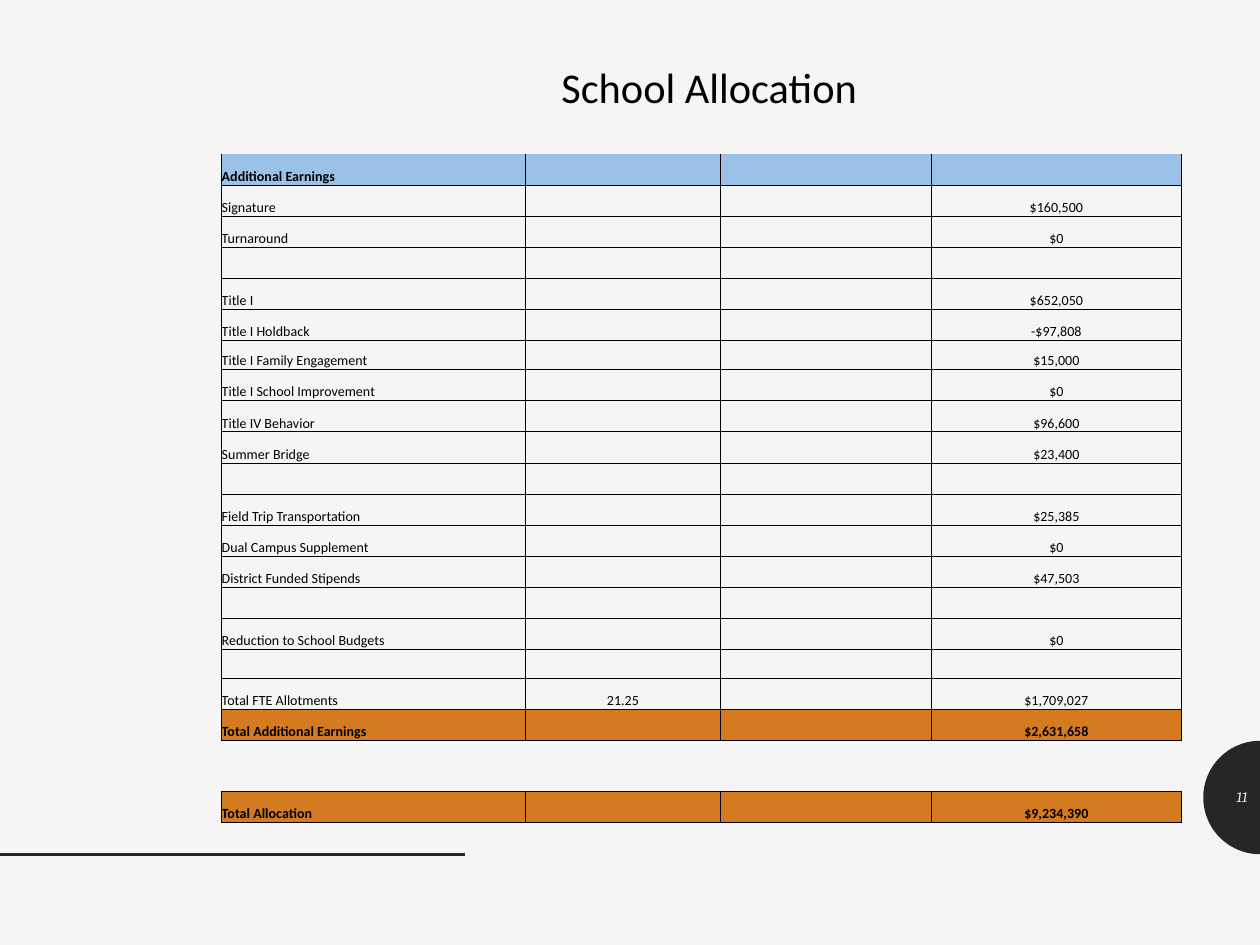
from math import cos, pi, sin

from lxml.etree import SubElement
from pptx import Presentation
from pptx.dml.color import RGBColor
from pptx.enum.shapes import MSO_CONNECTOR as Connector
from pptx.enum.text import MSO_ANCHOR as Anchor, PP_ALIGN as Align
from pptx.oxml.ns import qn
from pptx.util import Inches, Pt

hex_color = RGBColor.from_string
INK, PAPER, BLACK = "262626", "F5F5F5", "000000"
BLUE, ORANGE = "9BC2E6", "D47B22"

deck = Presentation()
deck.slide_width, deck.slide_height = Inches(10), Inches(7.5)
WIDTH, HEIGHT = deck.slide_width, deck.slide_height
slide = deck.slides.add_slide(deck.slide_layouts[6])
slide.background.fill.solid()
slide.background.fill.fore_color.rgb = hex_color(PAPER)


def share(*parts):
    return [round(part * size) for part, size in zip(parts, (WIDTH, HEIGHT) * 2)]


def write(frame, text, size, font="Calibri", color=BLACK, align=Align.LEFT,
          bold=False, italic=False, spacing=None):
    frame.word_wrap = True
    paragraph = frame.paragraphs[0]
    paragraph.alignment = align
    paragraph.line_spacing = spacing
    if not text:
        SubElement(paragraph._p, qn("a:endParaRPr"), sz=str(size * 100))
        return
    run = paragraph.add_run()
    run.text = text
    run.font.size, run.font.name = Pt(size), font
    run.font.bold, run.font.italic = bold, italic
    run.font.color.rgb = hex_color(color)


radius = Inches(0.45)
center_y = round(HEIGHT * 0.844)
steps = 48
arc = [(WIDTH + radius * cos(angle), center_y + radius * sin(angle))
       for angle in (pi / 2 + pi * step / steps for step in range(steps + 1))]
outline = slide.shapes.build_freeform(*arc[0], scale=1.0)
outline.add_line_segments(arc[1:], close=True)
badge = outline.convert_to_shape()
badge.shadow.inherit = False
badge.fill.solid()
badge.fill.fore_color.rgb = hex_color(INK)
badge.line.fill.background()

footer_rule = slide.shapes.add_connector(Connector.STRAIGHT, *share(0, 0.904, 0.369, 0.904))
footer_rule.line.color.rgb = hex_color(INK)
footer_rule.line.width = Pt(2)
SubElement(footer_rule._element.spPr, qn("a:effectLst"))

page_number = slide.shapes.add_textbox(*share(0.955, 0.817, 0.045, 0.053)).text_frame
page_number.vertical_anchor = Anchor.MIDDLE
write(page_number, "11", 8.2, font="Cambria", color=PAPER, align=Align.RIGHT, italic=True)

title = slide.shapes.add_textbox(*share(0.113, 0.068, 0.9, 0.057)).text_frame
title.vertical_anchor = Anchor.MIDDLE
write(title, "School Allocation", 24.2, align=Align.CENTER, spacing=0.8)

allocations = [
    ("Additional Earnings", "", ""),
    ("Signature", "", "$160,500"),
    ("Turnaround", "", "$0"),
    ("", "", ""),
    ("Title I", "", "$652,050"),
    ("Title I Holdback", "", "-$97,808"),
    ("Title I Family Engagement", "", "$15,000"),
    ("Title I School Improvement", "", "$0"),
    ("Title IV Behavior", "", "$96,600"),
    ("Summer Bridge", "", "$23,400"),
    ("", "", ""),
    ("Field Trip Transportation", "", "$25,385"),
    ("Dual Campus Supplement", "", "$0"),
    ("District Funded Stipends", "", "$47,503"),
    ("", "", ""),
    ("Reduction to School Budgets", "", "$0"),
    ("", "", ""),
    ("Total FTE Allotments", "21.25", "$1,709,027"),
    ("Total Additional Earnings", "", "$2,631,658"),
    ("", "", ""),
    ("", "", ""),
    ("Total Allocation", "", "$9,234,390"),
]
band_fills = {0: BLUE, 18: ORANGE, 21: ORANGE}
gap_rows = (19, 20)
special_heights = {6: 0.23, 16: 0.23, 19: 0.2, 20: 0.2}
column_widths = (2.41, 1.55, 1.67, 1.99)
table_height = 5.31
row_height = (table_height - sum(special_heights.values())) / (len(allocations) - len(special_heights))

left, top = share(0.176, 0.163)
table = slide.shapes.add_table(len(allocations), len(column_widths), left, top,
                               Inches(sum(column_widths)), Inches(table_height)).table
table.first_row = table.horz_banding = False
for column, width in zip(table.columns, column_widths):
    column.width = Inches(width)

for index, (label, positions, amount) in enumerate(allocations):
    table.rows[index].height = Inches(special_heights.get(index, row_height))
    band = band_fills.get(index)
    open_sides = {0: ("T",), 19: ("L", "R", "B"), 20: ("L", "R", "T")}.get(index, ())
    for column, text in enumerate((label, positions, "", amount)):
        cell = table.cell(index, column)
        cell.margin_left = cell.margin_right = cell.margin_top = cell.margin_bottom = 0
        cell.vertical_anchor = Anchor.BOTTOM
        write(cell.text_frame, text, 8, bold=band is not None,
              align=Align.CENTER if column else Align.LEFT)
        properties = cell._tc.get_or_add_tcPr()
        for side in "LRTB":
            border = SubElement(properties, qn(f"a:ln{side}"), w=str(Pt(0.5)))
            if side in open_sides:
                SubElement(border, qn("a:noFill"))
            else:
                SubElement(SubElement(border, qn("a:solidFill")), qn("a:srgbClr"), val=BLACK)
        if band:
            cell.fill.solid()
            cell.fill.fore_color.rgb = hex_color(band)
        else:
            cell.fill.background()

deck.save("out.pptx")
